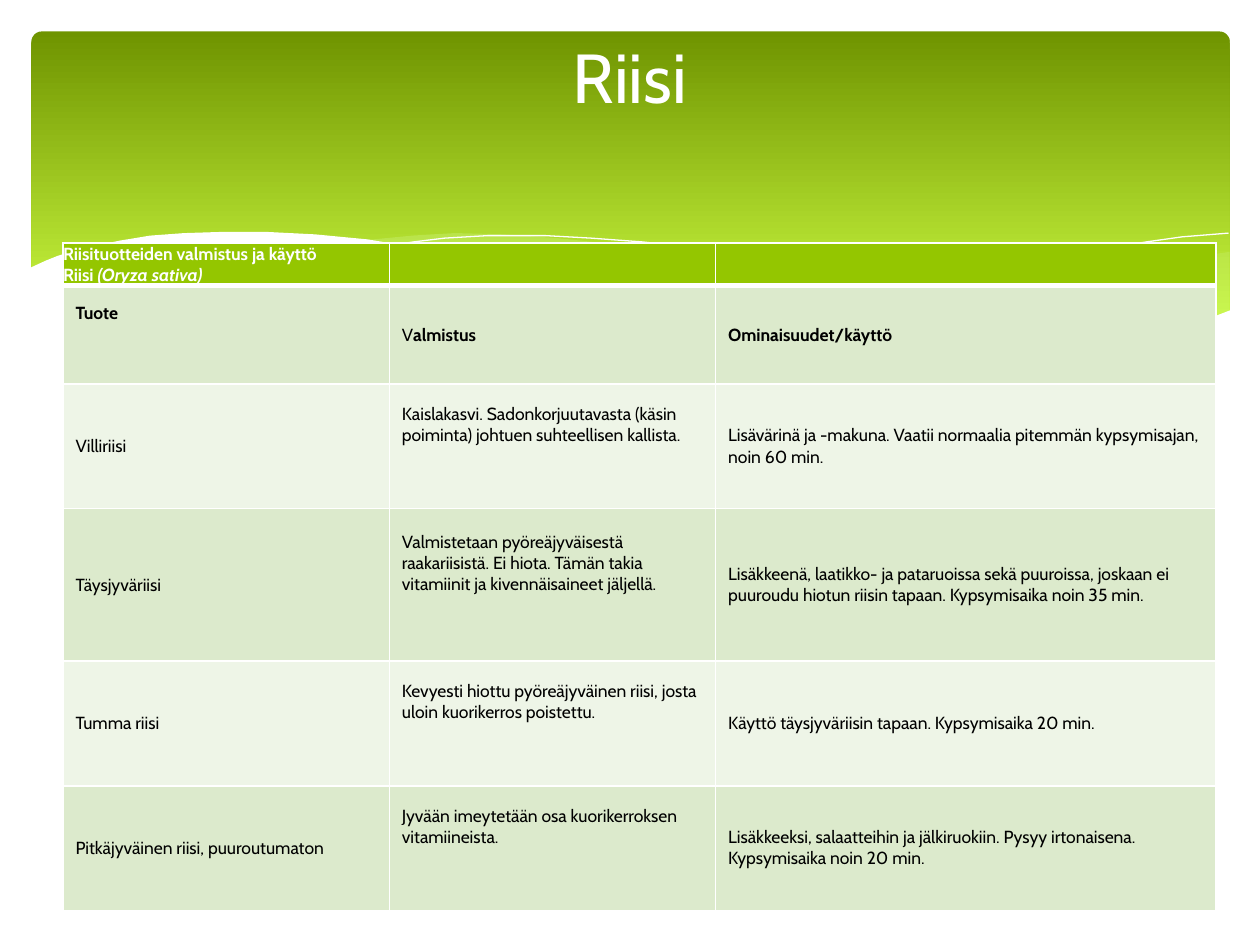
from pptx import Presentation
from pptx.dml.color import RGBColor
from pptx.enum.shapes import MSO_SHAPE as SHAPE
from pptx.enum.text import MSO_ANCHOR as ANCHOR, MSO_AUTO_SIZE as AUTO, PP_ALIGN as ALIGN
from pptx.oxml.ns import qn
from pptx.util import Emu, Pt
from lxml.etree import SubElement

PX = 9144  # EMU per px, 100 px to the inch
WHITE, BLACK, GREEN, PALE = "FFFFFF", "000000", "94C600", "CAF278"
BANDS = ["DCEACC", "EEF5E7"]


def px(n):
    return Emu(n * PX)


def rgb(color):
    return RGBColor.from_string(color)


class Deck:
    font = "Cabin"
    size = 10
    margin_x, margin_y = 10, 5

    def __init__(self, width, height):
        self.prs = Presentation()
        self.prs.slide_width, self.prs.slide_height = px(width), px(height)

    def new_slide(self):
        self.s = self.prs.slides.add_slide(self.prs.slide_layouts[5])

    def style(self, r, size, color, bold=False, italic=False):
        f = r.font
        f.name, f.size, f.bold, f.italic = self.font, Pt(size), bold, italic
        f.color.rgb = rgb(color)

    def banner(self, x, y, w, h, stops):
        sp = self.s.shapes.add_shape(SHAPE.ROUNDED_RECTANGLE, px(x), px(y), px(w), px(h))
        sp.adjustments[0] = 0.03
        sp.shadow.inherit = False
        sp.line.fill.background()
        sp.fill.gradient()
        sp.fill.gradient_angle = 270
        for stop, (position, color) in zip(sp.fill.gradient_stops, stops):
            stop.position, stop.color.rgb = position, rgb(color)

    def curve(self, points, closed):
        fb = self.s.shapes.build_freeform(*points[0], scale=PX)
        fb.add_line_segments(points[1:], close=closed)
        sp = fb.convert_to_shape()
        sp.shadow.inherit = False
        return sp

    def wave(self, points, color, opacity=100):
        sp = self.curve(points, True)
        sp.line.fill.background()
        sp.fill.solid()
        sp.fill.fore_color.rgb = rgb(color)
        if opacity < 100:
            clr = sp.element.spPr.find(qn("a:solidFill"))[0]
            SubElement(clr, qn("a:alpha")).set("val", str(opacity * 1000))

    def hairline(self, points, color):
        sp = self.curve(points, False)
        sp.fill.background()
        sp.line.color.rgb = rgb(color)
        sp.line.width = 0

    def title(self, text, x, y, w, h, size):
        sp = self.s.shapes.title
        sp.left, sp.top, sp.width, sp.height = px(x), px(y), px(w), px(h)
        tf = sp.text_frame
        tf.text = text
        tf.auto_size, tf.vertical_anchor = AUTO.NONE, ANCHOR.MIDDLE
        p = tf.paragraphs[0]
        p.alignment = ALIGN.CENTER
        self.style(p.runs[0], size, WHITE)
        # Bring the title in front of the banner
        sp.element.getparent().append(sp.element)

    def border(self, cell, color, bottom):
        tc_pr = cell._tc.get_or_add_tcPr()
        for side, width in (("L", 1), ("R", 1), ("T", 1), ("B", bottom)):
            ln = SubElement(tc_pr, qn("a:ln" + side), w=str(Pt(width)))
            fill = SubElement(ln, qn("a:solidFill"))
            SubElement(fill, qn("a:srgbClr"), val=color)

    def cell(self, cell, paragraphs, fill, color, margins, bottom=1):
        """Each paragraph is a list of (text, bold, italic) runs."""
        self.border(cell, WHITE, bottom)
        cell.fill.solid()
        cell.fill.fore_color.rgb = rgb(fill)
        cell.vertical_anchor = ANCHOR.MIDDLE
        (cell.margin_left, cell.margin_top,
         cell.margin_right, cell.margin_bottom) = map(px, margins)
        tf = cell.text_frame
        for i, runs in enumerate(paragraphs):
            p = tf.add_paragraph() if i else tf.paragraphs[0]
            for text, bold, italic in runs:
                r = p.add_run()
                r.text = text
                self.style(r, self.size, color, bold, italic)

    def table(self, x, y, cols, rows, header, body, raised, lift):
        """Cells listed in raised sit higher by a deeper bottom margin."""
        tbl = self.s.shapes.add_table(len(rows), len(cols), px(x), px(y),
                                      px(sum(cols)), px(sum(rows))).table
        for col, w in zip(tbl.columns, cols):
            col.width = px(w)
        for row, h in zip(tbl.rows, rows):
            row.height = px(h)
        for c, paragraphs in enumerate(header):
            self.cell(tbl.cell(0, c), paragraphs, GREEN, WHITE, (0, 0, 0, 0), bottom=3)
        for r, line in enumerate(body, 1):
            for c, runs in enumerate(line):
                low = self.margin_y + (lift if (r, c) in raised else 0)
                margins = (self.margin_x, self.margin_y, self.margin_x, low)
                self.cell(tbl.cell(r, c), [runs], BANDS[(r - 1) % 2], BLACK, margins)


# Outlines of the waves under the banner
RIGHT_WAVE = [
    (975, 200), (948, 204), (921, 210), (891, 216), (861, 223), (805, 237), (753, 248),
    (706, 257), (661, 265), (691, 269), (719, 272), (745, 275), (781, 277), (814, 278),
    (844, 277), (872, 274), (897, 270), (921, 265), (942, 259), (963, 252), (976, 247),
    (976, 200)]
MIDDLE_WAVE = [
    (893, 273), (866, 269), (807, 260), (741, 247), (668, 231), (629, 222), (598, 214),
    (569, 208), (541, 203), (514, 198), (489, 194), (442, 189), (399, 186), (361, 185),
    (328, 187), (286, 191), (323, 196), (362, 203), (404, 211), (449, 222), (491, 232),
    (530, 240), (566, 248), (601, 255), (634, 261), (665, 266), (695, 270), (722, 274),
    (748, 276), (785, 278), (828, 278), (857, 277), (876, 275)]
LONG_LINE = [
    (309, 195), (328, 192), (353, 189), (387, 187), (433, 187), (469, 189), (510, 192),
    (556, 197), (608, 204), (665, 213), (727, 226), (795, 241), (831, 251), (869, 261),
    (907, 272)]
RIGHT_LINE = [
    (613, 257), (653, 246), (695, 235), (748, 223), (806, 210), (866, 199), (910, 192),
    (938, 188), (975, 185)]
WHITE_WAVE = [
    (977, 246), (959, 253), (940, 259), (920, 265), (899, 269), (875, 273), (850, 275),
    (823, 277), (793, 276), (761, 275), (726, 272), (688, 268), (648, 262), (603, 254),
    (555, 245), (503, 233), (447, 220), (418, 213), (391, 207), (365, 202), (340, 197),
    (316, 194), (292, 190), (250, 186), (211, 184), (177, 184), (146, 185), (119, 187),
    (95, 191), (76, 195), (59, 199), (46, 203), (36, 207), (23, 213), (23, 329), (977, 329)]


def plain(*texts):
    return [[(text, False, False)] for text in texts]


HEADER = [
    [[("Riisituotteiden valmistus ja käyttö", True, False)],
     [("Riisi ", True, False), ("(Oryza sativa)", True, True)]],
    [], []]
BODY = [
    [[("Tuote", True, False)],
     [("V", False, False), ("almistus", True, False)],
     [("Ominaisuudet/käyttö", True, False)]],
    plain("Villiriisi",
          "Kaislakasvi. Sadonkorjuutavasta (käsin poiminta) johtuen suhteellisen kallista.",
          "Lisävärinä ja -makuna. Vaatii normaalia pitemmän kypsymisajan, noin 60 min."),
    plain("Täysjyväriisi",
          "Valmistetaan pyöreäjyväisestä raakariisistä. Ei hiota. Tämän takia vitamiinit ja "
          "kivennäisaineet jäljellä.",
          "Lisäkkeenä, laatikko- ja pataruoissa sekä puuroissa, joskaan ei puuroudu hiotun "
          "riisin tapaan. Kypsymisaika noin 35 min."),
    plain("Tumma riisi",
          "Kevyesti hiottu pyöreäjyväinen riisi, josta uloin kuorikerros poistettu.",
          "Käyttö täysjyväriisin tapaan. Kypsymisaika 20 min."),
    plain("Pitkäjyväinen riisi, puuroutumaton",
          "Jyvään imeytetään osa kuorikerroksen vitamiineista.",
          "Lisäkkeeksi, salaatteihin ja jälkiruokiin. Pysyy irtonaisena. "
          "Kypsymisaika noin 20 min."),
]
RAISED = {(1, 0), (2, 1), (3, 1), (4, 1), (5, 1)}


def main():
    deck = Deck(1000, 750)
    deck.new_slide()
    # Green banner with its waves
    deck.banner(25, 25, 951, 270, [(0, "6F9400"), (0.9, "D0FF44")])
    deck.wave(RIGHT_WAVE, PALE, 29)
    deck.wave(MIDDLE_WAVE, PALE, 40)
    deck.hairline(LONG_LINE, WHITE)
    deck.hairline(RIGHT_LINE, WHITE)
    deck.wave(WHITE_WAVE, WHITE)
    # Rice products
    deck.table(50, 193, [259, 259, 397], [32, 78, 99, 121, 99, 99],
               HEADER, BODY, RAISED, lift=34)
    deck.title("Riisi", 50, 37, 900, 47, 39.6)
    deck.prs.save("out.pptx")


if __name__ == "__main__":
    main()
